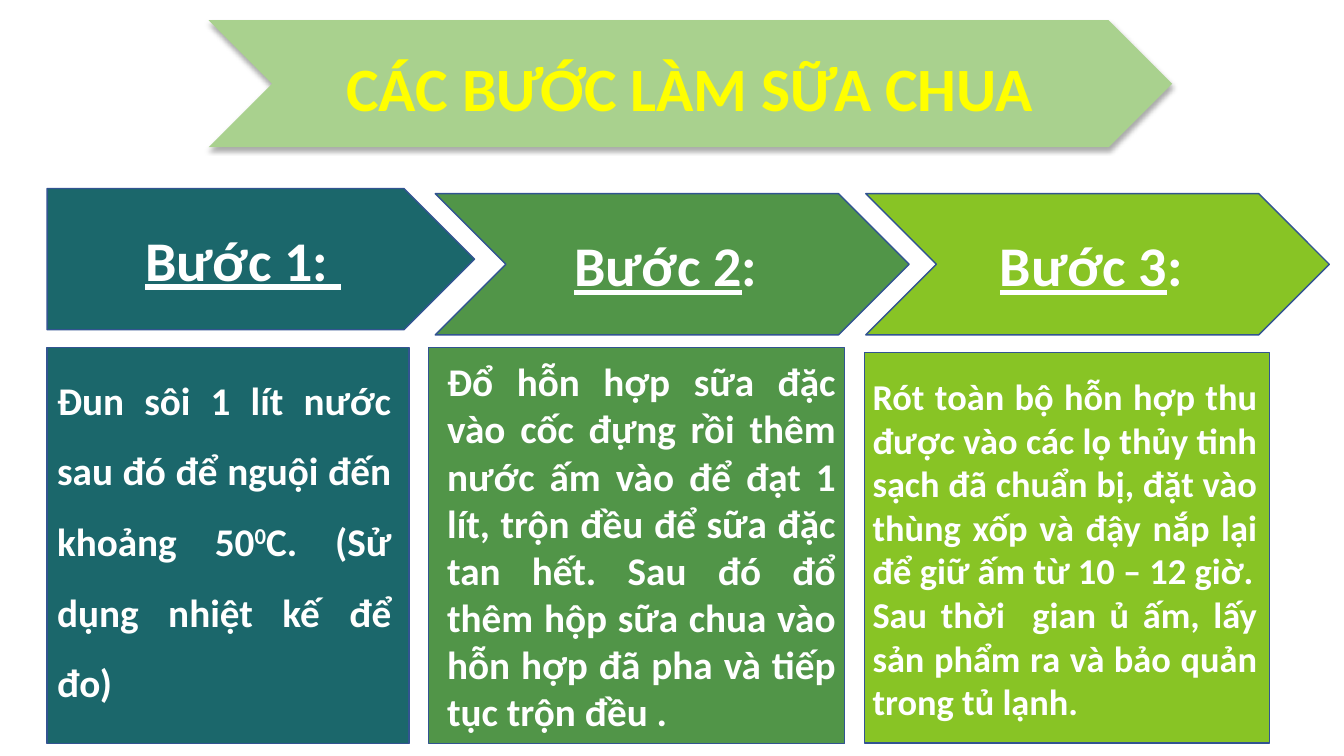
from collections import namedtuple

import lxml.etree
import pptx
import pptx.dml.color
import pptx.enum.shapes
import pptx.enum.text
import pptx.oxml.ns
import pptx.util

Cm = pptx.util.Cm
Pt = pptx.util.Pt
RGBColor = pptx.dml.color.RGBColor
SHAPE = pptx.enum.shapes.MSO_SHAPE
ALIGN = pptx.enum.text.PP_ALIGN
ANCHOR = pptx.enum.text.MSO_ANCHOR

WHITE = RGBColor(0xFF, 0xFF, 0xFF)
YELLOW = RGBColor(0xFF, 0xFF, 0x00)
PALE_GREEN = RGBColor(0xA9, 0xD1, 0x8E)
TEAL = RGBColor(0x1B, 0x67, 0x6B)
GREEN = RGBColor(0x51, 0x95, 0x48)
LIME = RGBColor(0x88, 0xC4, 0x25)
OUTLINE = RGBColor(0x32, 0x54, 0x91)

Box = namedtuple("Box", "left top width height")
Span = namedtuple("Span", "text underline baseline", defaults=(False, 0))
Step = namedtuple("Step", "color arrow arrow_box heading panel_box text_box size spacing paras")

STEPS = [
    Step(TEAL, SHAPE.PENTAGON, Box(1.19, 4.75, 10.77, 3.56),
         [Span("Bước 1: ", True)],
         Box(1.19, 8.76, 9.12, 9.98), Box(0, 0, 8.92, 9.04), 28, 1.5,
         [[Span("Đun sôi 1 lít nước sau đó để nguội đến khoảng 50"),
           Span("0", baseline=30),
           Span("C. (Sử dụng nhiệt kế để đo)")]]),
    Step(GREEN, SHAPE.CHEVRON, Box(10.97, 4.88, 11.94, 3.56),
         [Span("Bước 2", True), Span(": ")],
         Box(10.8, 8.76, 10.49, 9.98), Box(0.22, 0.13, 10.29, 9.83), 28, 1,
         [[Span("Đổ hỗn hợp sữa đặc vào cốc đựng rồi thêm nước ấm vào để đạt 1 lít, "
                "trộn đều để sữa đặc tan hết. Sau đó đổ thêm hộp sữa chua vào hỗn hợp "
                "đã pha và tiếp tục trộn đều .")]]),
    Step(LIME, SHAPE.CHEVRON, Box(21.82, 4.88, 11.68, 3.56),
         [Span("Bước 3", True), Span(": ")],
         Box(21.79, 8.89, 10.21, 9.83), Box(-0.05, 0.41, 10.21, 9.14), 26, 1,
         [[Span("Rót toàn bộ hỗn hợp thu được vào các lọ thủy tinh sạch đã chuẩn bị, "
                "đặt vào thùng xốp và đậy nắp lại để giữ ấm từ 10 – 12 giờ.")],
          [Span("Sau thời  gian ủ ấm, lấy sản phẩm ra và bảo quản trong tủ lạnh.")]]),
]


def place(box):
    return [Cm(length) for length in box]


def inside(outer, inner):
    return Box(outer.left + inner.left, outer.top + inner.top, inner.width, inner.height)


def add_block(page, kind, box, color, line=OUTLINE):
    block = page.shapes.add_shape(kind, *place(box))
    block.shadow.inherit = False
    block.fill.solid()
    block.fill.fore_color.rgb = color
    if line is None:
        block.line.fill.background()
    else:
        block.line.color.rgb = line
        block.line.width = Pt(1)
    return block


def write(frame, paras, size, color=WHITE, align=ALIGN.LEFT, spacing=1):
    frame.word_wrap = True
    for index, spans in enumerate(paras):
        para = frame.add_paragraph() if index else frame.paragraphs[0]
        para.alignment = align
        para.line_spacing = spacing
        for span in spans:
            run = para.add_run()
            run.text = span.text
            run.font.name = "Calibri"
            run.font.size = Pt(size)
            run.font.bold = True
            run.font.underline = span.underline
            run.font.color.rgb = color
            if span.baseline:
                run.font._element.set("baseline", str(span.baseline * 1000))


def add_shadow(block):
    qn = pptx.oxml.ns.qn
    effects = block._element.spPr.find(qn("a:effectLst"))
    shadow = lxml.etree.SubElement(effects, qn("a:outerShdw"), blurRad=str(Pt(3.5)),
                                   dist=str(Pt(2.2)), dir="5400000", rotWithShape="0")
    tint = lxml.etree.SubElement(shadow, qn("a:srgbClr"), val="000000")
    lxml.etree.SubElement(tint, qn("a:alpha"), val="32000")


def add_title(page, box):
    add_shadow(add_block(page, SHAPE.CHEVRON, box, PALE_GREEN, None))
    label = page.shapes.add_textbox(*place(inside(box, Box(3.22, 0.63, 20.88, 2.13))))
    write(label.text_frame, [[Span("CÁC BƯỚC LÀM SỮA CHUA")]], 44, YELLOW)


def add_heading(page, box, step):
    arrow = add_block(page, step.arrow, box, step.color)
    arrow.text_frame.vertical_anchor = ANCHOR.MIDDLE
    write(arrow.text_frame, [step.heading], 40, align=ALIGN.CENTER)


def add_panel(page, box, step):
    add_block(page, SHAPE.RECTANGLE, box, step.color)
    label = page.shapes.add_textbox(*place(inside(box, step.text_box)))
    write(label.text_frame, step.paras, step.size, align=ALIGN.JUSTIFY, spacing=step.spacing)


def main():
    deck = pptx.Presentation()
    deck.slide_width, deck.slide_height = Cm(33.87), Cm(19.05)
    page = deck.slides.add_slide(deck.slide_layouts[6])
    add_title(page, Box(5.26, 0.51, 24.28, 3.2))
    for step in STEPS:
        add_heading(page, step.arrow_box, step)
    for step in STEPS:
        add_panel(page, step.panel_box, step)
    deck.save("out.pptx")


if __name__ == "__main__":
    main()
